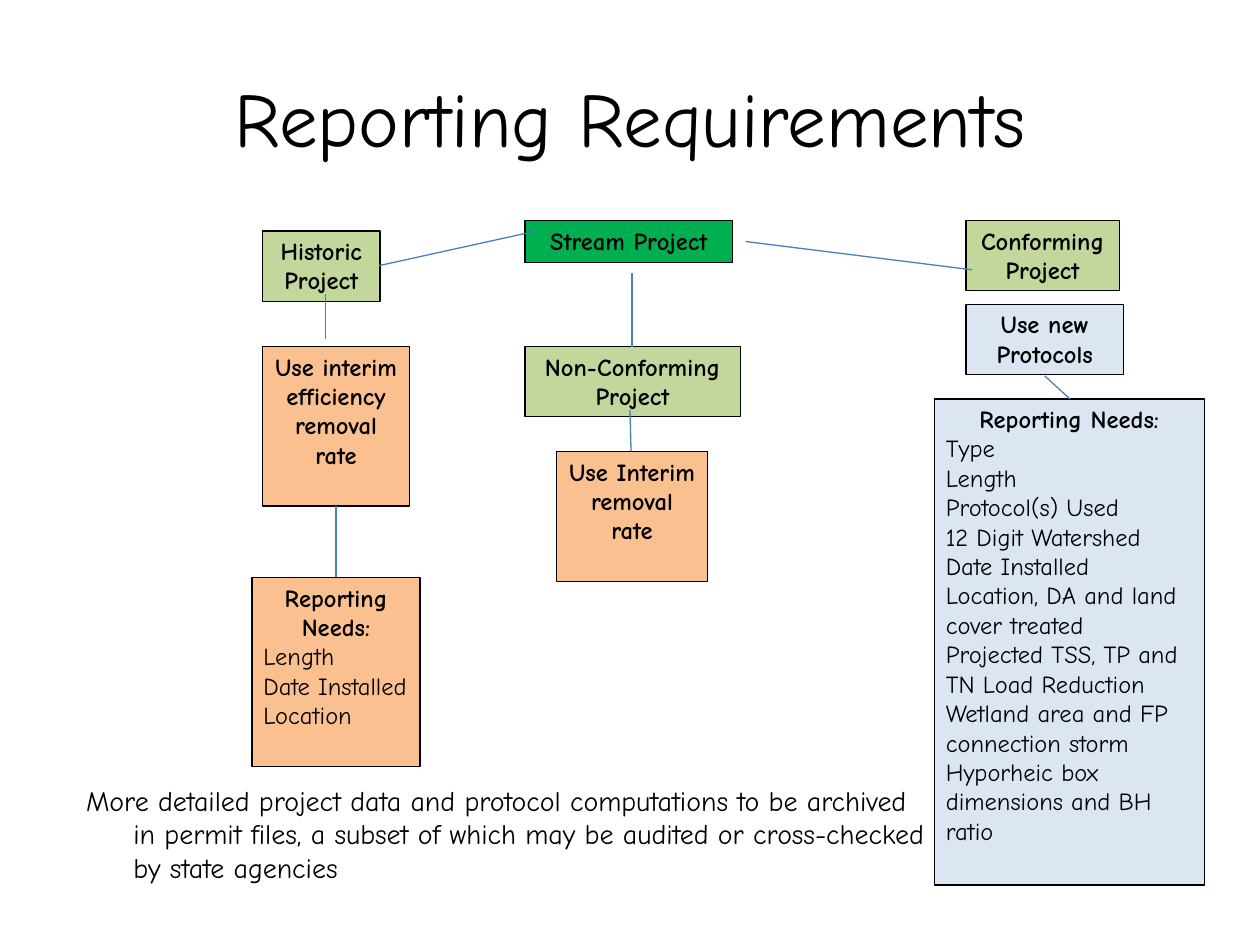
"""Build the stream project reporting requirements slide."""
from lxml.etree import SubElement
from pptx import Presentation
from pptx.dml.color import RGBColor
from pptx.enum.shapes import MSO_CONNECTOR, MSO_SHAPE
from pptx.enum.text import MSO_ANCHOR, MSO_AUTO_SIZE, PP_ALIGN
from pptx.oxml.ns import qn
from pptx.util import Inches, Pt

FONT = "Comic Neue"
BLACK = RGBColor(0x00, 0x00, 0x00)
GREEN = RGBColor(0x00, 0xB0, 0x50)
LIGHT_GREEN = RGBColor(0xC3, 0xD6, 0x9B)
ORANGE = RGBColor(0xFA, 0xC0, 0x90)
PALE_BLUE = RGBColor(0xDC, 0xE6, 0xF2)
LINE_BLUE = RGBColor(0x4B, 0x7E, 0xBC)

COLUMNS, ROWS = 120, 90
TITLE = "Reporting Requirements"
TITLE_AREA = (6, 3.6, 108, 15)
NOTE = ("More detailed project data and protocol computations to be archived in permit "
        "files, a subset of which may be audited or cross-checked by state agencies")
NOTE_AREA = (7, 74, 82.5, 14)

# fill, (column, row, columns wide, rows high), bold headings, plain items
BOXES = [
    (GREEN, (50, 21, 19.8, 4), ["Stream Project"], []),
    (LIGHT_GREEN, (50, 33, 20.5, 6.7), ["Non-Conforming", "Project"], []),
    (LIGHT_GREEN, (92, 21, 14.6, 6.7), ["Conforming", "Project"], []),
    (ORANGE, (53, 43, 14.4, 12.4), ["Use Interim removal rate"], []),
    (PALE_BLUE, (92, 29, 15, 6.7), ["Use new Protocols"], []),
    (PALE_BLUE, (89, 38, 25.7, 46.3), ["Reporting Needs:"], [
        "Type", "Length", "Protocol(s) Used", "12 Digit Watershed", "Date Installed",
        "Location, DA and land cover treated",
        "Projected TSS, TP and TN Load Reduction",
        "Wetland area and FP connection storm",
        "Hyporheic box dimensions and BH ratio"]),
    (LIGHT_GREEN, (25, 22, 11.2, 6.7), ["Historic", "Project"], []),
    (ORANGE, (25, 33, 14, 15.2), ["Use interim efficiency removal rate"], []),
    (ORANGE, (24, 55, 16, 18), ["Reporting Needs:"],
     ["Length", "Date Installed", "Location"]),
]

LINKS = [
    (36.1, 25.3, 51.1, 22),
    (92.6, 25.7, 71, 23),
    (60, 39, 60.1, 43),
    (99.5, 35.8, 101.9, 38),
    (31, 28, 31, 32.3),
    (32, 48.2, 32, 55),
    (60.2, 26, 60.2, 33),
]


def place(deck, area):
    """Turn two pairs of grid columns and rows into slide lengths."""
    cells = (deck.slide_width / COLUMNS, deck.slide_height / ROWS) * 2
    return [int(count * cell) for count, cell in zip(area, cells)]


def style(para, size, bold=False, align=PP_ALIGN.LEFT):
    """Set the font and alignment of a paragraph."""
    para.alignment = align
    para.font.name = FONT
    para.font.size = Pt(size)
    para.font.bold = bold
    para.font.color.rgb = BLACK


def fill_placeholder(deck, holder, area, text, size, align):
    """Move a placeholder and write its single paragraph."""
    holder.left, holder.top, holder.width, holder.height = place(deck, area)
    holder.text_frame.text = text
    holder.text_frame.auto_size = MSO_AUTO_SIZE.NONE
    para = holder.text_frame.paragraphs[0]
    style(para, size, align=align)
    return para


def add_box(deck, page, fill, area, headings, items):
    """Add a filled box with centred headings above left-aligned items."""
    box = page.shapes.add_shape(MSO_SHAPE.RECTANGLE, *place(deck, area))
    box.shadow.inherit = False
    box.fill.solid()
    box.fill.fore_color.rgb = fill
    box.line.color.rgb = BLACK
    box.line.width = Pt(0.75)
    frame = box.text_frame
    frame.word_wrap = True
    frame.vertical_anchor = MSO_ANCHOR.TOP
    frame.margin_left = frame.margin_right = Inches(0.09)
    frame.margin_top = frame.margin_bottom = Inches(0.04)
    frame.text = "\n".join(headings + items)
    for index, para in enumerate(frame.paragraphs):
        heading = index < len(headings)
        style(para, 14, heading, PP_ALIGN.CENTER if heading else PP_ALIGN.LEFT)


def add_link(deck, page, ends):
    """Add a thin straight line between two grid points."""
    link = page.shapes.add_connector(MSO_CONNECTOR.STRAIGHT, *place(deck, ends))
    link.line.color.rgb = LINE_BLUE
    link.line.width = Pt(0.75)
    SubElement(link._element.spPr, qn("a:effectLst"))


def main():
    """Create and save the deck."""
    deck = Presentation()
    deck.slide_width, deck.slide_height = Inches(10), Inches(7.5)
    page = deck.slides.add_slide(deck.slide_layouts[1])
    fill_placeholder(deck, page.shapes.title, TITLE_AREA, TITLE, 44, PP_ALIGN.CENTER)
    note = fill_placeholder(deck, page.placeholders[1], NOTE_AREA, NOTE, 16, PP_ALIGN.LEFT)
    SubElement(note._p.get_or_add_pPr(), qn("a:buNone"))
    properties = note._p.pPr
    properties.insert(0, properties.find(qn("a:buNone")))
    for box in BOXES:
        add_box(deck, page, *box)
    for ends in LINKS:
        add_link(deck, page, ends)
    deck.save("out.pptx")


if __name__ == "__main__":
    main()
